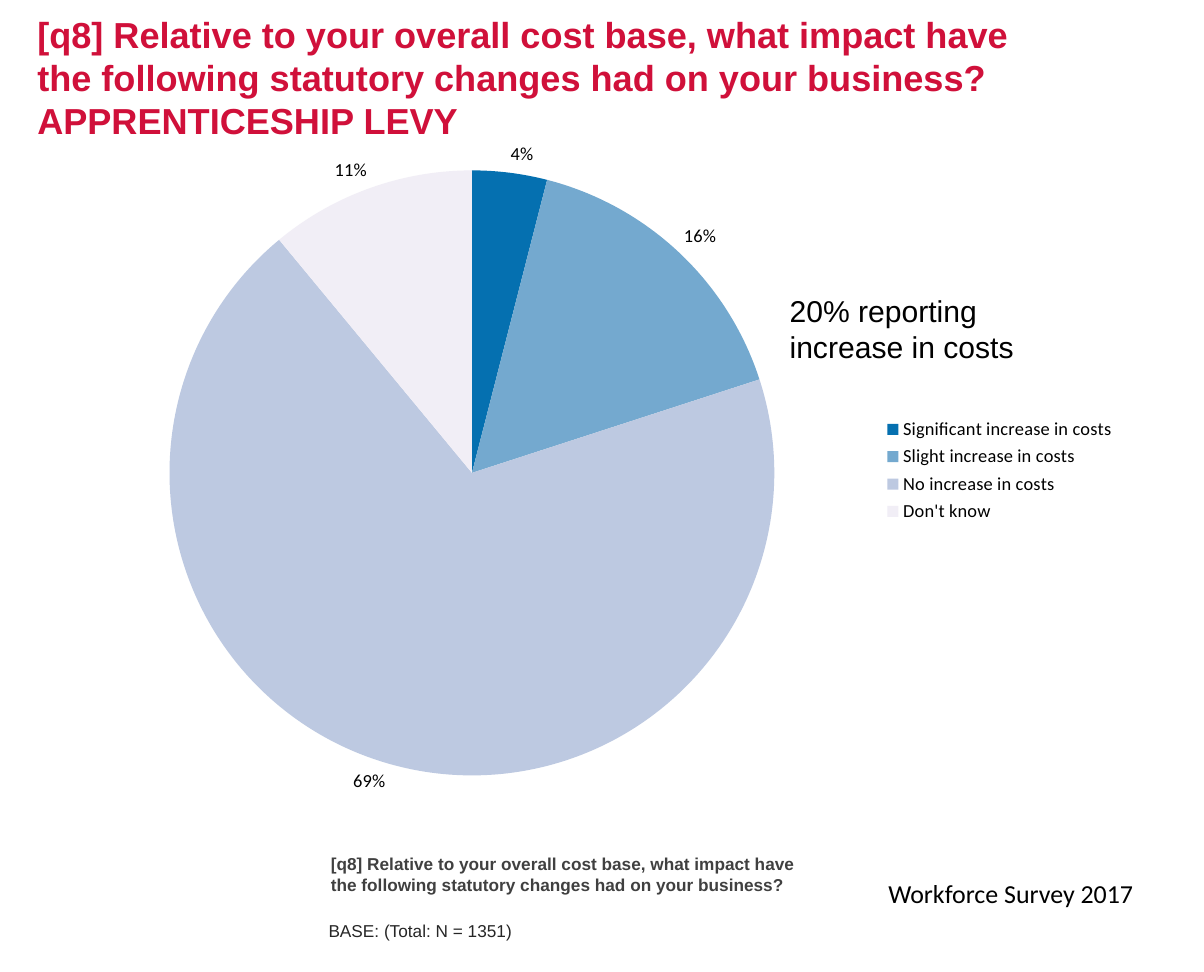
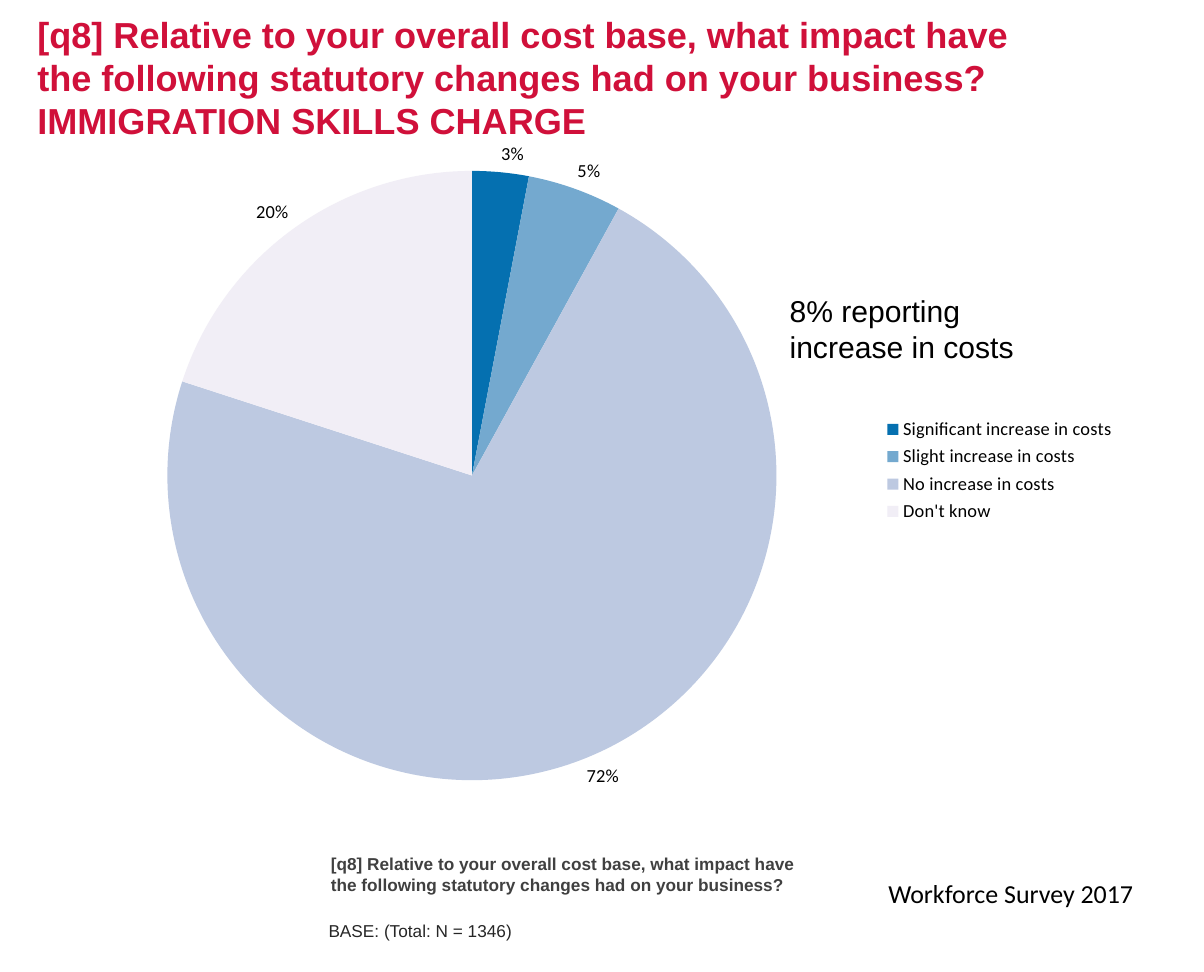
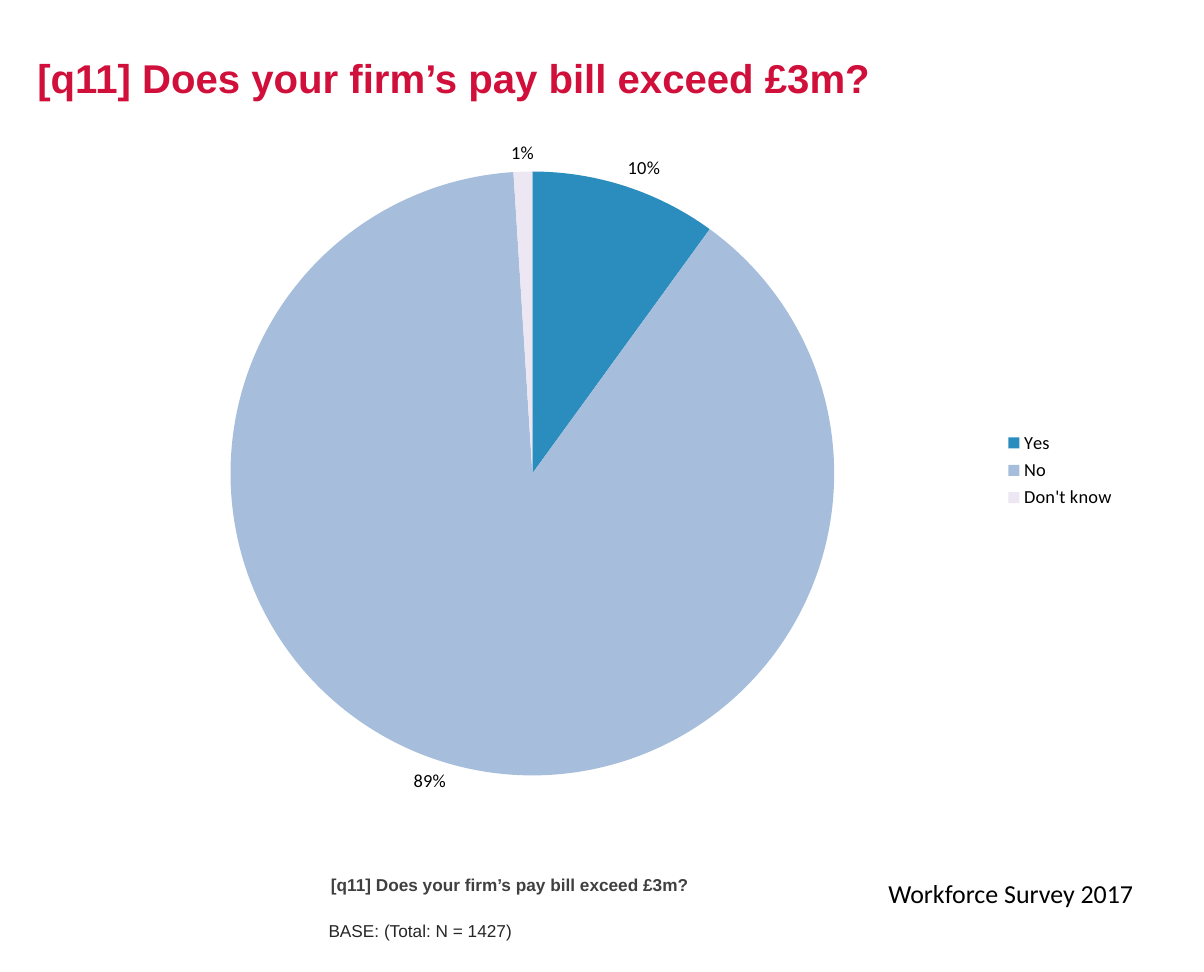
from dataclasses import dataclass
from typing import NamedTuple

from pptx import Presentation
from pptx.chart.data import CategoryChartData as ChartData
from pptx.dml.color import RGBColor as Color
from pptx.enum.chart import XL_CHART_TYPE as ChartType
from pptx.enum.chart import XL_LABEL_POSITION as LabelPosition
from pptx.enum.chart import XL_LEGEND_POSITION as LegendPosition
from pptx.enum.text import MSO_ANCHOR as Anchor
from pptx.enum.text import MSO_AUTO_SIZE as AutoSize
from pptx.enum.text import PP_ALIGN as Align
from pptx.util import Pt


class Box(NamedTuple):
    left: float
    top: float
    width: float
    height: float

    def lengths(self):
        return [Pt(value) for value in self]


class Style(NamedTuple):
    font: str
    size: float
    color: str
    bold: bool = False


@dataclass(frozen=True)
class Theme:
    long_title: Style = Style("Arial", 21.6, "D0103A", True)
    short_title: Style = Style("Arial", 24, "D0103A", True)
    survey: Style = Style("Calibri", 15.5, "000000")
    question: Style = Style("Arial", 10.3, "404040", True)
    base: Style = Style("Arial", 10.3, "262626")
    chart: Style = Style("Calibri", 11, "000000")
    callout: Style = Style("Arial", 18, "000000")
    impact_colors: tuple = ("0570B0", "74A9CF", "BDC9E1", "F1EEF6")
    answer_colors: tuple = ("2B8CBE", "A6BDDB", "ECE7F2")


THEME = Theme()
SLIDE_WIDTH, SLIDE_HEIGHT = 720, 581.04
TITLE_BOX = Box(15.1, 14.4, 684.7, 63.4)
CHART_BOX = Box(37.4, 74.9, 637.2, 412.6)
FOOTER_BOX = Box(189.4, 511.9, 509.8, 54)

NBSP = chr(160)
IMPACT_QUESTION = (
    f"[q8] Relative to your overall cost base, what impact have the{NBSP}following "
    "statutory changes had on your business?"
)
PAY_BILL_QUESTION = "[q11] Does your firm’s pay bill exceed £3m?"
IMPACT_ANSWERS = (
    "Significant increase in costs",
    "Slight increase in costs",
    "No increase in costs",
    "Don't know",
)
PAY_BILL_ANSWERS = ("Yes", "No", "Don't know")


def apply_style(font, style):
    font.name = style.font
    font.size = Pt(style.size)
    font.bold = style.bold
    font.color.rgb = Color.from_string(style.color)


def fill_text(shape, text, style, anchor, auto_size=AutoSize.NONE):
    frame = shape.text_frame
    frame.word_wrap = True
    frame.auto_size = auto_size
    frame.vertical_anchor = anchor
    paragraph = frame.paragraphs[0]
    paragraph.text = text
    paragraph.alignment = Align.LEFT
    apply_style(paragraph.font, style)


def add_text(slide, box, text, style, anchor=Anchor.TOP, auto_size=AutoSize.NONE):
    shape = slide.shapes.add_textbox(*box.lengths())
    fill_text(shape, text, style, anchor, auto_size)


def place_title(slide, box, text, style):
    title = slide.shapes.title
    title.left, title.top, title.width, title.height = box.lengths()
    fill_text(title, text, style, Anchor.MIDDLE)


def add_footer(slide, box, question, total):
    survey_box = Box(box.left + 334.8, box.top + 9.4, 175, 25.9)
    question_box = Box(box.left + 1.4, box.top, 331.2, 26.6)
    base_box = Box(box.left, box.top + 26.6, 331.2, 27.4)
    add_text(slide, survey_box, "Workforce Survey 2017", THEME.survey)
    add_text(slide, question_box, question, THEME.question, Anchor.BOTTOM)
    add_text(slide, base_box, f"BASE: (Total: N = {total})", THEME.base, Anchor.BOTTOM)


def add_pie(slide, box, answers, values, colors):
    data = ChartData()
    data.categories = answers
    data.add_series("Series 1", values)
    chart = slide.shapes.add_chart(ChartType.PIE, *box.lengths(), data).chart
    chart.has_title = False
    apply_style(chart.font, THEME.chart)
    chart.has_legend = True
    chart.legend.position = LegendPosition.RIGHT
    chart.legend.include_in_layout = False

    plot = chart.plots[0]
    plot.vary_by_categories = True
    for index, color in enumerate(colors):
        fill = plot.series[0].points[index].format.fill
        fill.solid()
        fill.fore_color.rgb = Color.from_string(color)

    labels = plot.series[0].data_labels
    labels.show_percentage = True
    labels.show_value = False
    labels.number_format = "0%"
    labels.number_format_is_linked = False
    labels.position = LabelPosition.OUTSIDE_END


def add_callout(slide, box, share):
    callout_box = Box(box.left + 427.7, box.top + 96.5, 165.6, 51.1)
    text = f"{share}% reporting increase in costs"
    add_text(slide, callout_box, text, THEME.callout, auto_size=AutoSize.SHAPE_TO_FIT_TEXT)


def add_question_slide(presentation, title, title_style, question, total, answers, values, colors):
    slide = presentation.slides.add_slide(presentation.slide_layouts[5])
    place_title(slide, TITLE_BOX, title, title_style)
    add_footer(slide, FOOTER_BOX, question, total)
    add_pie(slide, CHART_BOX, answers, values, colors)
    return slide


def add_impact_slide(presentation, change, total, values):
    slide = add_question_slide(
        presentation, f"{IMPACT_QUESTION}\n{change}", THEME.long_title,
        IMPACT_QUESTION, total, IMPACT_ANSWERS, values, THEME.impact_colors,
    )
    add_callout(slide, CHART_BOX, sum(values[:2]))


def main():
    presentation = Presentation()
    presentation.slide_width = Pt(SLIDE_WIDTH)
    presentation.slide_height = Pt(SLIDE_HEIGHT)
    add_impact_slide(presentation, "APPRENTICESHIP LEVY", 1351, (4, 16, 69, 11))
    add_impact_slide(presentation, "IMMIGRATION SKILLS CHARGE", 1346, (3, 5, 72, 20))
    add_question_slide(
        presentation, PAY_BILL_QUESTION, THEME.short_title,
        PAY_BILL_QUESTION, 1427, PAY_BILL_ANSWERS, (10, 89, 1), THEME.answer_colors,
    )
    presentation.save("out.pptx")


if __name__ == "__main__":
    main()
